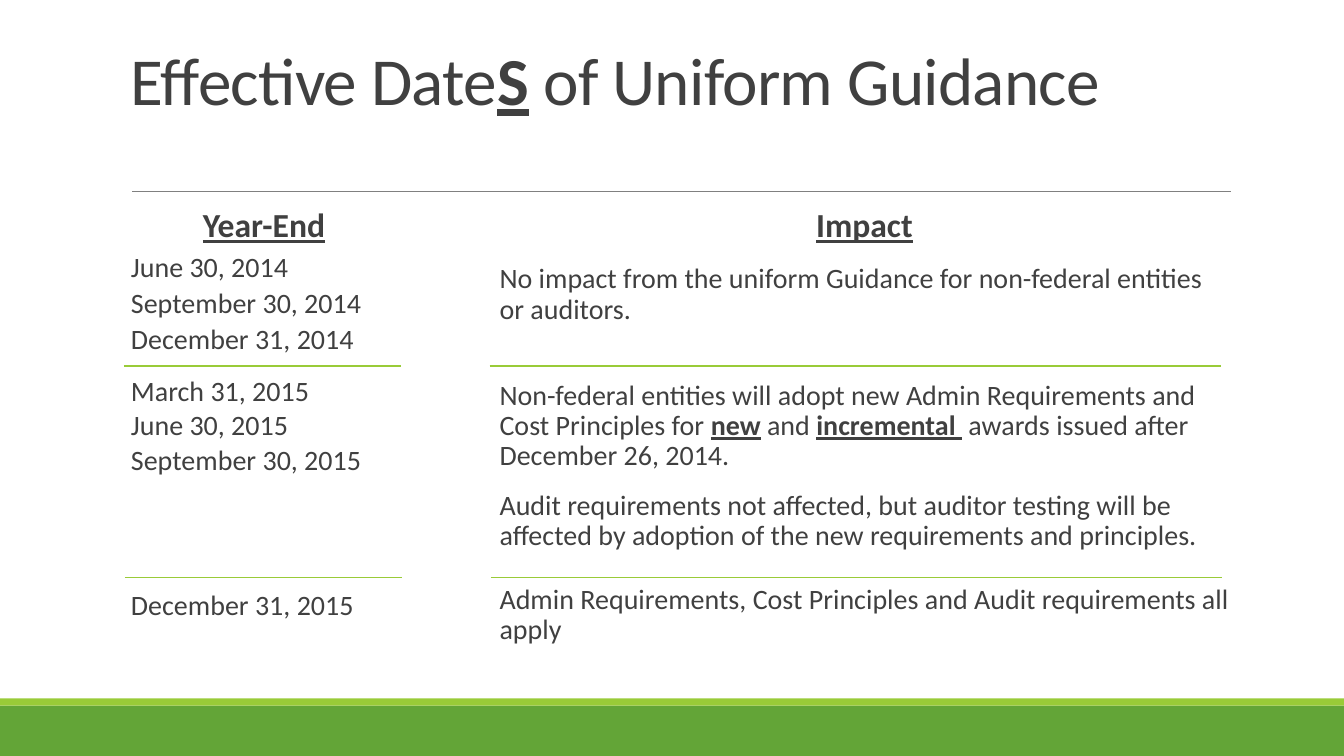
from lxml import etree
from pptx import Presentation
from pptx.dml.color import RGBColor
from pptx.enum.shapes import MSO_CONNECTOR as Connector, MSO_SHAPE as Shape
from pptx.enum.text import MSO_ANCHOR as Anchor, PP_ALIGN as Align
from pptx.oxml.ns import qn
from pptx.util import Cm, Pt

# Content: a paragraph is (spans, space before, space after); a span is (text, emphasised)
TITLE = [([("Effective Date", False), ("S", True), (" of Uniform Guidance", False)], 0, 0)]
YEAR_ENDS = [
    ([("Year-End", True)], 12, 6),
    ([("June 30, 2014", False)], 0, 2),
    ([("September 30, 2014", False)], 2, 2),
    ([("December 31, 2014", False)], 2, 12),
    ([("March 31, 2015", False)], 4, 2),
    ([("June 30, 2015", False)], 0, 2),
    ([("September 30, 2015", False)], 2, 2),
    ([("December 31, 2015", False)], 80, 2),
]
IMPACTS = [
    ([("Impact", True)], 12, 2),
    ([("No impact from the uniform Guidance for non-federal entities or auditors.", False)], 12, 2),
    ([("Non-federal entities will adopt new Admin Requirements and Cost Principles for ", False),
      ("new", True), (" and ", False), ("incremental ", True),
      (" awards issued after December 26, 2014.", False)], 38, 2),
    ([("Audit requirements not affected, but auditor testing will be affected by "
       "adoption of the new requirements and principles.", False)], 12, 6),
    ([("Admin Requirements, Cost Principles and Audit requirements all apply", False)], 18, 6),
]

# Layout in centimetres, colours as hex
WIDTH, HEIGHT = 33.87, 19.05
TEXT, GREY, GREEN, LIME = "404040", "808080", "63A537", "99CB38"
BANDS = [(17.78, 1.27, GREEN), (17.6, 0.18, LIME)]  # top, height, colour
COLUMNS = [(3.05, 6.96, 11.18, YEAR_ENDS), (12.34, 18.64, 11.94, IMPACTS)]
COLUMN_TOP = 5.13
RULE_SPANS = [(3.12, 10.11), (12.34, 30.76)]  # left and right end under each column
RULE_ROWS = [(9.22, 0), (14.55, 0.03)]  # height and sideways shift


def color(value):
    return RGBColor.from_string(value)


def add_band(top, height, fill):
    band = slide.shapes.add_shape(Shape.RECTANGLE, 0, Cm(top), Cm(WIDTH), Cm(height))
    band.shadow.inherit = False
    band.fill.solid()
    band.fill.fore_color.rgb = color(fill)
    band.line.fill.background()


def add_rule(left, right, height, stroke, weight):
    rule = slide.shapes.add_connector(
        Connector.STRAIGHT, Cm(left), Cm(height), Cm(right), Cm(height))
    rule.line.color.rgb = color(stroke)
    rule.line.width = Pt(weight)
    etree.SubElement(rule._element.spPr, qn("a:effectLst"))


def add_text(paragraphs, left, top, width, height, *, size, heading_size=None,
             line_spacing=0.9, anchor=Anchor.TOP, right_inset=0, bottom_inset=0.13,
             tracking=0):
    box = slide.shapes.add_textbox(Cm(left), Cm(top), Cm(width), Cm(height))
    frame = box.text_frame
    frame.word_wrap = True
    frame.vertical_anchor = anchor
    frame.margin_left, frame.margin_right = Cm(0.25), Cm(right_inset)
    frame.margin_top, frame.margin_bottom = Cm(0.13), Cm(bottom_inset)
    for index, (spans, before, after) in enumerate(paragraphs):
        is_heading = heading_size is not None and index == 0
        para = frame.add_paragraph() if index else frame.paragraphs[0]
        para.alignment = Align.CENTER if is_heading else Align.LEFT
        para.line_spacing = line_spacing
        para.space_before, para.space_after = Pt(before), Pt(after)
        for text, emphasised in spans:
            span = para.add_run()
            span.text = text
            span.font.name = "Calibri"
            span.font.size = Pt(heading_size if is_heading else size)
            span.font.color.rgb = color(TEXT)
            span.font.bold = span.font.underline = emphasised
            if tracking:
                span._r.get_or_add_rPr().set("spc", str(int(tracking * 100)))


deck = Presentation()
deck.slide_width, deck.slide_height = Cm(WIDTH), Cm(HEIGHT)
slide = deck.slides.add_slide(deck.slide_layouts[6])

# Footer bands and the rule below the title
for band_top, band_height, band_fill in BANDS:
    add_band(band_top, band_height, band_fill)
add_rule(3.33, 31.01, 4.83, GREY, 0.5)

# Title
add_text(TITLE, 3.05, 0.79, 27.94, 4.04, size=48, line_spacing=0.85,
         anchor=Anchor.BOTTOM, right_inset=0.25, bottom_inset=2.03, tracking=-0.5)

# Two columns of text
for column_left, column_width, column_height, paragraphs in COLUMNS:
    add_text(paragraphs, column_left, COLUMN_TOP, column_width, column_height,
             size=20, heading_size=24)

# Rules between the rows
for row_height, shift in RULE_ROWS:
    for start, end in RULE_SPANS:
        add_rule(start + shift, end + shift, row_height, LIME, 1)

deck.save("out.pptx")
